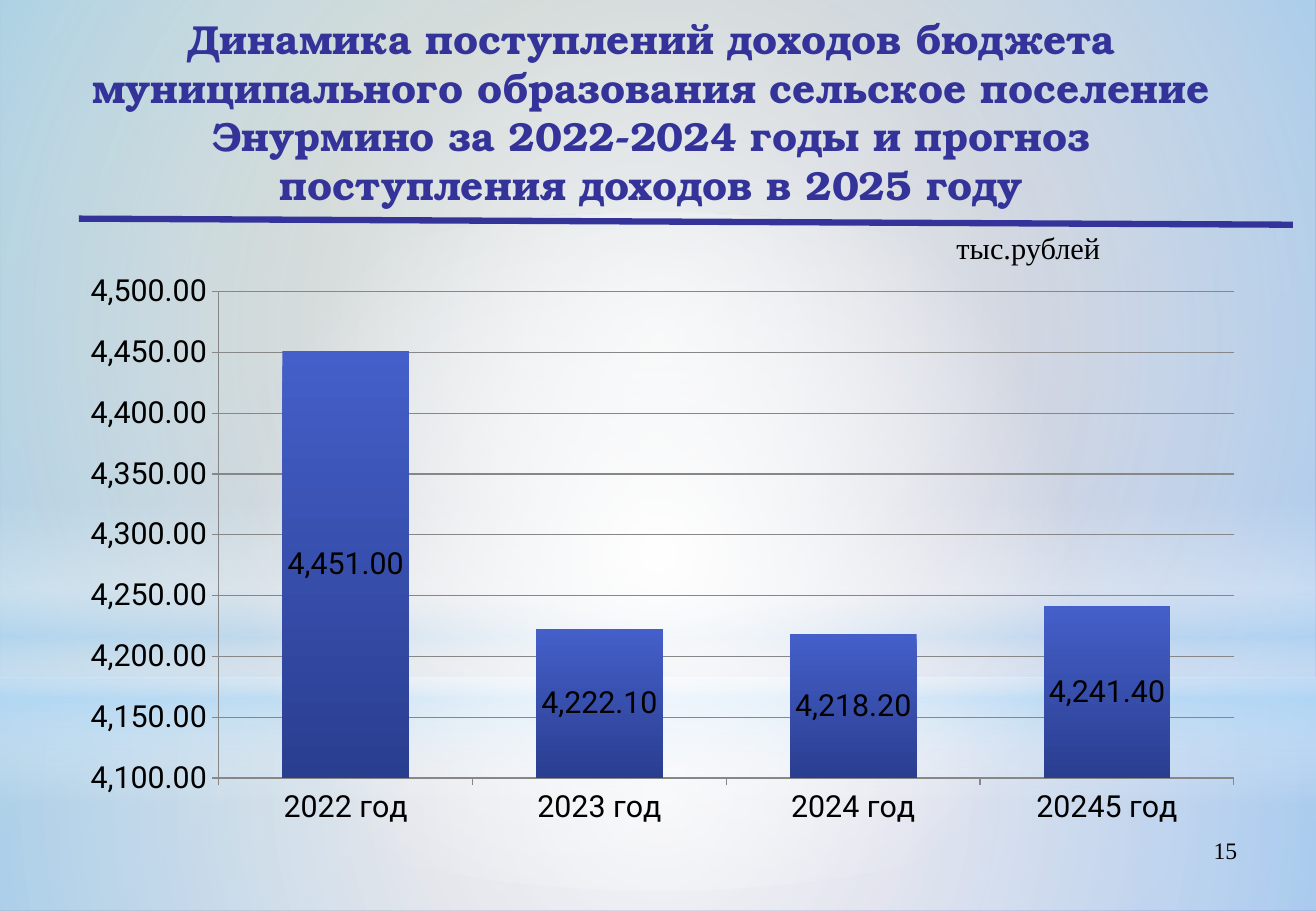
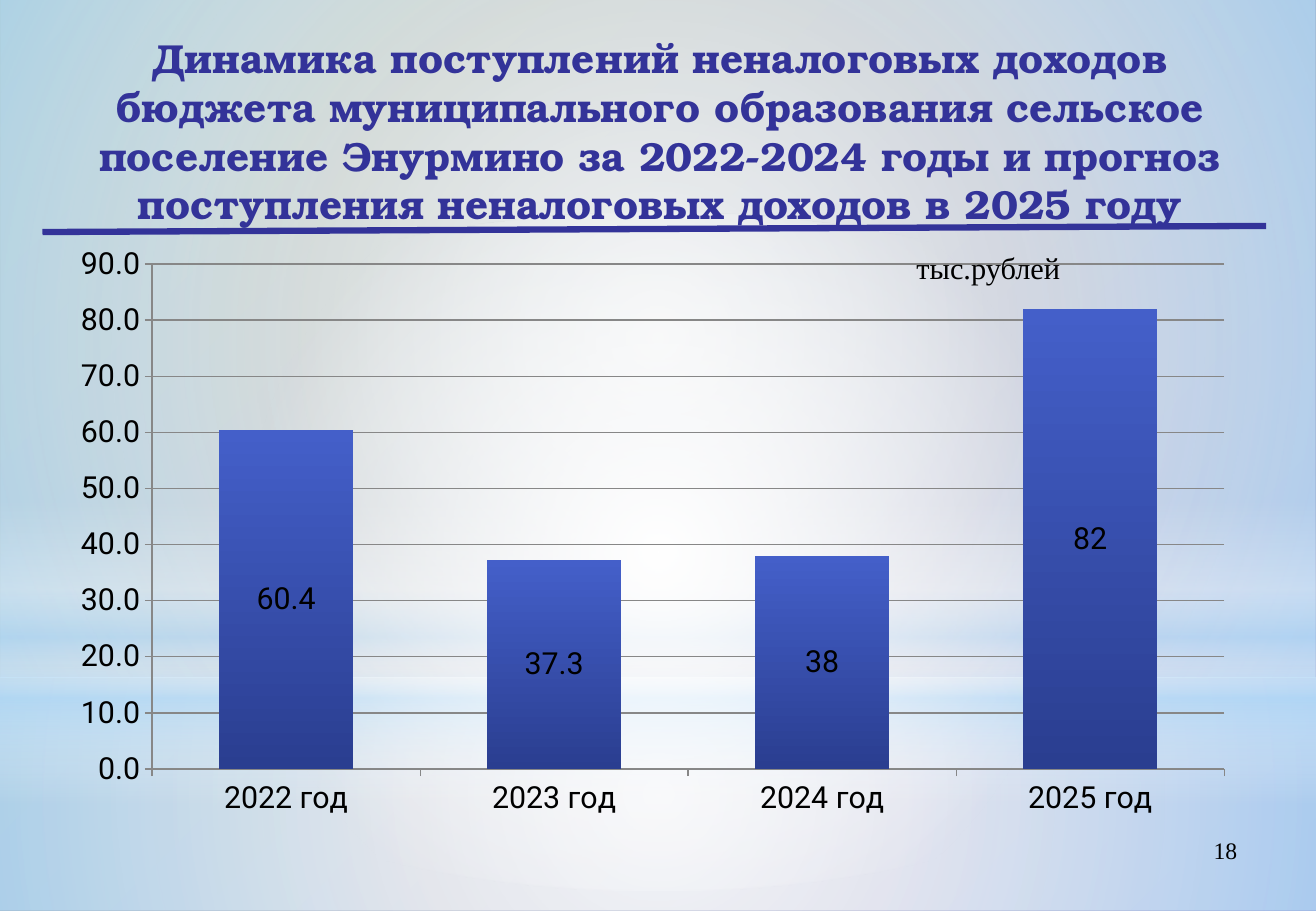
import lxml.etree
import pptx
import pptx.chart.data
import pptx.dml.color
import pptx.enum.chart
import pptx.enum.shapes
import pptx.enum.text
import pptx.oxml.ns
import pptx.util

WIDE = pptx.util.Inches(10.84)
HIGH = pptx.util.Inches(7.5)
INK = "000000"
NAVY = "333399"
GRID = "878787"
BASE = ("96AB94", "8488C4")
BAR = ("445FC9", "2A3E90")
WHITE = "FFFFFF"
SKY = "B4DCFA"
SERIF = "Times New Roman"
HEAD = "TeX Gyre Bonum"
SANS = "Roboto"
RECT = pptx.enum.shapes.MSO_SHAPE.RECTANGLE
OVAL = pptx.enum.shapes.MSO_SHAPE.OVAL

LAYERS = [
    (RECT, (0, 74.4, 100, 25.6), None,
     [(0, WHITE, 91), (37, WHITE, 76), (100, SKY, 79)]),
    (RECT, (0, 0, 100, 74.4), None,
     [(0, WHITE, 89), (48, WHITE, 62), (100, SKY, 79)]),
    (RECT, (0, 54.93, 100, 33.33), 90,
     [(0, WHITE, 0), (29, WHITE, 30), (45, SKY, 40),
      (55, WHITE, 26), (65, SKY, 60), (100, WHITE, 0)]),
    (OVAL, (0, 23.33, 100, 74.4), None,
     [(0, WHITE, 100), (56, WHITE, 0)]),
]

SLIDES = [
    {
        "title": "Динамика поступлений доходов бюджета муниципального "
                 "образования сельское поселение Энурмино за 2022-2024 годы "
                 "и прогноз поступления доходов в 2025 году",
        "head": (4.52, 3.07, 89.94, 18.27),
        "rule": (6, 24, 98.25, 24.67),
        "plot": (5.07, 28.8, 90.5, 63.07),
        "unit": (71.77, 24.53, 12.92, 5.33),
        "years": ["2022 год", "2023 год", "2024 год", "20245 год"],
        "sums": [4451, 4222.1, 4218.2, 4241.4],
        "scale": (4100, 4500, 50),
        "forms": ("#,##0.00", "#,##0.00"),
        "page": "15",
    },
    {
        "title": "Динамика поступлений неналоговых доходов бюджета "
                 "муниципального образования сельское поселение Энурмино "
                 "за 2022-2024 годы и прогноз поступления неналоговых "
                 "доходов в 2025 году",
        "head": (5.17, 5.2, 89.94, 18.27),
        "rule": (3.23, 25.47, 96.22, 24.8),
        "plot": (4.34, 25.73, 90.5, 65.2),
        "unit": (68.73, 26.67, 12.92, 5.33),
        "years": ["2022 год", "2023 год", "2024 год", "2025 год"],
        "sums": [60.4, 37.3, 38, 82],
        "scale": (0, 90, 10),
        "forms": ("0.0", "General"),
        "page": "18",
    },
]


def hue(code):
    return pptx.dml.color.RGBColor.from_string(code)


def place(box):
    return [round(share * side / 100)
            for share, side in zip(box, (WIDE, HIGH, WIDE, HIGH))]


def style(font, face, size, code, bold=False):
    font.name = face
    font.size = pptx.util.Pt(size)
    font.color.rgb = hue(code)
    font.bold = bold


def blend(fill, pair, angle):
    fill.gradient()
    fill.gradient_angle = angle
    for stop, code, spot in zip(fill.gradient_stops, pair, (0, 1)):
        stop.color.rgb = hue(code)
        stop.position = spot


def glaze(shape, stops, angle):
    def add(node, tag, **items):
        return lxml.etree.SubElement(
            node, pptx.oxml.ns.qn("a:" + tag),
            {key: str(item) for key, item in items.items()})

    shape.fill.gradient()
    grad = shape.element.spPr.find(pptx.oxml.ns.qn("a:gradFill"))
    for child in list(grad):
        grad.remove(child)
    row = add(grad, "gsLst")
    for spot, code, alpha in stops:
        stop = add(row, "gs", pos=spot * 1000)
        add(add(stop, "srgbClr", val=code), "alpha", val=alpha * 1000)
    if angle is None:
        ring = add(grad, "path", path="circle")
        add(ring, "fillToRect", l=50000, t=50000, r=50000, b=50000)
    else:
        add(grad, "lin", ang=angle * 60000, scaled=0)


def back(master, slide):
    blend(master.background.fill, BASE, 315)
    for spot, (kind, box, angle, stops) in enumerate(LAYERS, 2):
        shape = slide.shapes.add_shape(kind, *place(box))
        shape.shadow.inherit = False
        shape.line.fill.background()
        glaze(shape, stops, angle)
        master.shapes.element.insert(spot, shape.element)


def head(slide, text, box):
    title = slide.shapes.title
    title.left, title.top, title.width, title.height = place(box)
    frame = title.text_frame
    frame.text = text
    frame.word_wrap = True
    frame.auto_size = pptx.enum.text.MSO_AUTO_SIZE.NONE
    frame.vertical_anchor = pptx.enum.text.MSO_ANCHOR.MIDDLE
    para = frame.paragraphs[0]
    para.alignment = pptx.enum.text.PP_ALIGN.CENTER
    style(para.runs[0].font, HEAD, 24, NAVY, True)


def rule(slide, ends):
    line = slide.shapes.add_connector(
        pptx.enum.shapes.MSO_CONNECTOR.STRAIGHT, *place(ends))
    line.line.color.rgb = hue(NAVY)
    line.line.width = pptx.util.Pt(3.75)
    lxml.etree.SubElement(line.element.spPr, pptx.oxml.ns.qn("a:effectLst"))


def note(slide, text, box, size, wrap, align):
    frame = slide.shapes.add_textbox(*place(box)).text_frame
    frame.text = text
    frame.word_wrap = wrap
    para = frame.paragraphs[0]
    para.alignment = align
    style(para.runs[0].font, SERIF, size, INK)


def bars(slide, box, years, sums, scale, forms):
    data = pptx.chart.data.CategoryChartData()
    data.categories = years
    data.add_series("Series 1", sums)
    chart = slide.shapes.add_chart(
        pptx.enum.chart.XL_CHART_TYPE.COLUMN_STACKED,
        *place(box), data).chart
    chart.has_title = False
    chart.has_legend = False
    style(chart.font, SANS, 18, INK)
    plot = chart.plots[0]
    plot.gap_width = 100
    plot.overlap = 100
    plot.vary_by_categories = False
    blend(plot.series[0].format.fill, BAR, 270)
    plot.has_data_labels = True
    tags = plot.data_labels
    tags.show_value = True
    tags.number_format = forms[1]
    tags.number_format_is_linked = False
    tags.position = pptx.enum.chart.XL_LABEL_POSITION.CENTER
    style(tags.font, SANS, 18, INK)
    axis = chart.value_axis
    axis.minimum_scale, axis.maximum_scale, axis.major_unit = scale
    axis.has_major_gridlines = True
    axis.tick_labels.number_format = forms[0]
    axis.tick_labels.number_format_is_linked = False
    for side in (axis, chart.category_axis):
        side.major_tick_mark = pptx.enum.chart.XL_TICK_MARK.OUTSIDE
        side.minor_tick_mark = pptx.enum.chart.XL_TICK_MARK.NONE
    for part in (axis, chart.category_axis, axis.major_gridlines):
        part.format.line.color.rgb = hue(GRID)
        part.format.line.width = pptx.util.Pt(0.75)


def build(slide, item):
    align = pptx.enum.text.PP_ALIGN
    note(slide, item["page"], (71.59, 91.07, 23.34, 6.93), 14, True,
         align.RIGHT)
    head(slide, item["title"], item["head"])
    rule(slide, item["rule"])
    bars(slide, item["plot"], item["years"], item["sums"],
         item["scale"], item["forms"])
    note(slide, "тыс.рублей", item["unit"], 18, False, align.LEFT)


def main():
    deck = pptx.Presentation()
    deck.slide_width, deck.slide_height = WIDE, HIGH
    slides = [deck.slides.add_slide(deck.slide_layouts[5]) for _ in SLIDES]
    back(deck.slide_master, slides[0])
    for slide, item in zip(slides, SLIDES):
        build(slide, item)
    deck.save("out.pptx")


if __name__ == "__main__":
    main()
